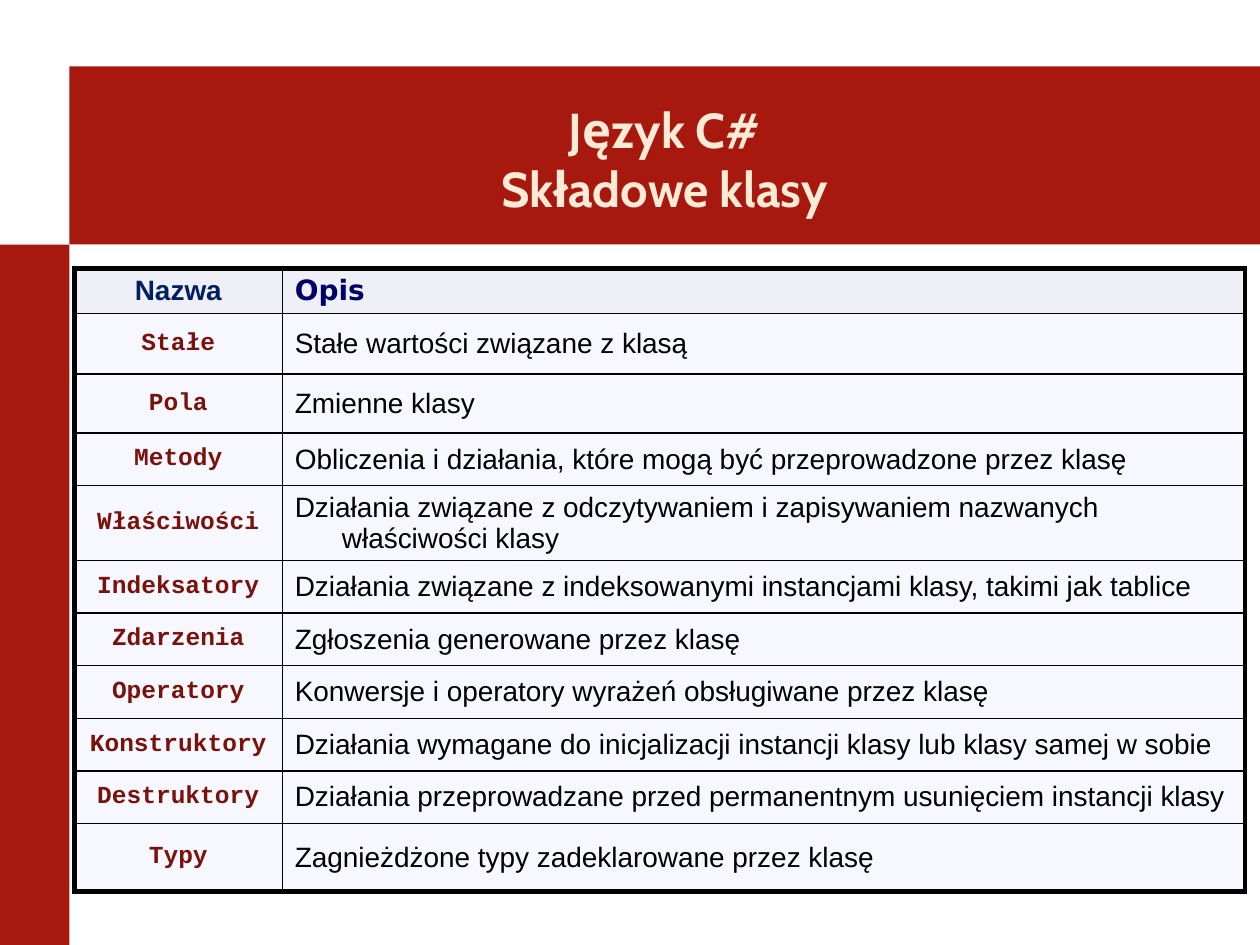
from dataclasses import dataclass

from lxml import etree
from pptx import Presentation
from pptx.dml.color import RGBColor
from pptx.enum.shapes import MSO_SHAPE
from pptx.enum.text import MSO_ANCHOR, PP_ALIGN
from pptx.oxml.ns import qn
from pptx.util import Cm, Pt

RECT = MSO_SHAPE.RECTANGLE
MIDDLE = MSO_ANCHOR.MIDDLE
LEFT, CENTER = PP_ALIGN.LEFT, PP_ALIGN.CENTER

RED = RGBColor(0xA7, 0x19, 0x0E)
CREAM = RGBColor(0xFF, 0xEB, 0xD5)
NAVY = RGBColor(0x00, 0x20, 0x60)
BLUE = RGBColor(0x00, 0x00, 0x66)
MAROON = RGBColor(0x78, 0x12, 0x0A)
BLACK = RGBColor(0x00, 0x00, 0x00)
HEAD_FILL = RGBColor(0xEF, 0xEF, 0xF7)
ROW_FILL = RGBColor(0xF7, 0xF7, 0xFF)

TITLE = {"name": "Cabin", "size": Pt(28), "bold": True, "color": CREAM}
NAME_HEAD = {"name": "Arial", "size": Pt(16), "bold": True, "color": NAVY}
DESC_HEAD = {"name": "DejaVu Sans", "size": Pt(16), "bold": True, "color": BLUE}
NAME = {"name": "Courier New", "size": Pt(14), "bold": True, "color": MAROON}
DESC = {"name": "Arial", "size": Pt(16), "bold": False, "color": BLACK}

HANG = Cm(0.95)
THIN, THICK = Pt(1), Pt(3)
COLS = (4.19, 19.41)


@dataclass
class Member:
    name: str
    desc: str
    height: float = 1.06


@dataclass
class Band:
    left: float
    top: float
    width: float
    height: float


BANDS = (Band(1.4, 1.34, 24, 3.59), Band(0, 4.93, 1.4, 14.12))

MEMBERS = (
    Member("Nazwa", "Opis", 0.91),
    Member("Stałe", "Stałe wartości związane z klasą", 1.22),
    Member("Pola", "Zmienne klasy", 1.19),
    Member("Metody", "Obliczenia i działania, które mogą być przeprowadzone przez klasę"),
    Member("Właściwości", "Działania związane z odczytywaniem i zapisywaniem nazwanych "
           "właściwości klasy", 1.5),
    Member("Indeksatory", "Działania związane z indeksowanymi instancjami klasy, "
           "takimi jak tablice"),
    Member("Zdarzenia", "Zgłoszenia generowane przez klasę"),
    Member("Operatory", "Konwersje i operatory wyrażeń obsługiwane przez klasę"),
    Member("Konstruktory", "Działania wymagane do inicjalizacji instancji klasy "
           "lub klasy samej w sobie"),
    Member("Destruktory", "Działania przeprowadzane przed permanentnym usunięciem "
           "instancji klasy"),
    Member("Typy", "Zagnieżdżone typy zadeklarowane przez klasę", 1.37),
)


def style(font, form: dict) -> None:
    for key, value in form.items():
        if key == "color":
            font.color.rgb = value
        else:
            setattr(font, key, value)


def add_band(slide, band: Band) -> None:
    shape = slide.shapes.add_shape(
        RECT, Cm(band.left), Cm(band.top), Cm(band.width), Cm(band.height))
    shape.shadow.inherit = False
    shape.fill.solid()
    shape.fill.fore_color.rgb = RED
    shape.line.fill.background()


def set_title(slide) -> None:
    title = slide.shapes.title
    title.left, title.top = Cm(1.7), Cm(1.75)
    title.width, title.height = Cm(23.4), Cm(2.87)
    frame = title.text_frame
    frame.vertical_anchor = MIDDLE
    frame.word_wrap = True
    frame.text = "Język C#\vSkładowe klasy"
    para = frame.paragraphs[0]
    para.alignment = CENTER
    for run in para.runs:
        style(run.font, TITLE)
    # Bring the title in front of the bands
    slide.shapes._spTree.append(title._element)


def set_edges(cell, edges: dict) -> None:
    """Put the four border lines ahead of the cell's fill, as the schema asks."""
    props = cell._tc.get_or_add_tcPr()
    for spot, (side, width) in enumerate(edges.items()):
        line = etree.Element(qn(f"a:{side}"), w=str(width))
        fill = etree.SubElement(line, qn("a:solidFill"))
        etree.SubElement(fill, qn("a:srgbClr"), val=str(BLACK))
        props.insert(spot, line)


def fill_cell(cell, text: str, form: dict, align, color: RGBColor) -> None:
    cell.fill.solid()
    cell.fill.fore_color.rgb = color
    cell.vertical_anchor = MIDDLE
    cell.text = text
    para = cell.text_frame.paragraphs[0]
    para.alignment = align
    props = para._p.get_or_add_pPr()
    props.set("marL", str(HANG))
    props.set("indent", str(-HANG))
    style(para.runs[0].font, form)


def add_table(slide) -> None:
    height = sum(member.height for member in MEMBERS)
    table = slide.shapes.add_table(
        len(MEMBERS), len(COLS), Cm(1.5), Cm(5.41), Cm(sum(COLS)), Cm(height)).table
    table.first_row = table.horz_banding = False
    for col, width in zip(table.columns, COLS):
        col.width = Cm(width)
    last = len(MEMBERS) - 1
    for r, member in enumerate(MEMBERS):
        table.rows[r].height = Cm(member.height)
        forms = (NAME_HEAD, DESC_HEAD) if r == 0 else (NAME, DESC)
        color = HEAD_FILL if r == 0 else ROW_FILL
        texts = (member.name, member.desc)
        for c, (text, form, align) in enumerate(zip(texts, forms, (CENTER, LEFT))):
            cell = table.cell(r, c)
            fill_cell(cell, text, form, align, color)
            set_edges(cell, {
                "lnL": THICK if c == 0 else THIN,
                "lnR": THICK if c == 1 else THIN,
                "lnT": THICK if r == 0 else THIN,
                "lnB": THICK if r == last else THIN,
            })


def main() -> None:
    deck = Presentation()
    deck.slide_width, deck.slide_height = Cm(25.4), Cm(19.05)
    slide = deck.slides.add_slide(deck.slide_layouts[5])
    for band in BANDS:
        add_band(slide, band)
    set_title(slide)
    add_table(slide)
    deck.save("out.pptx")


if __name__ == "__main__":
    main()
